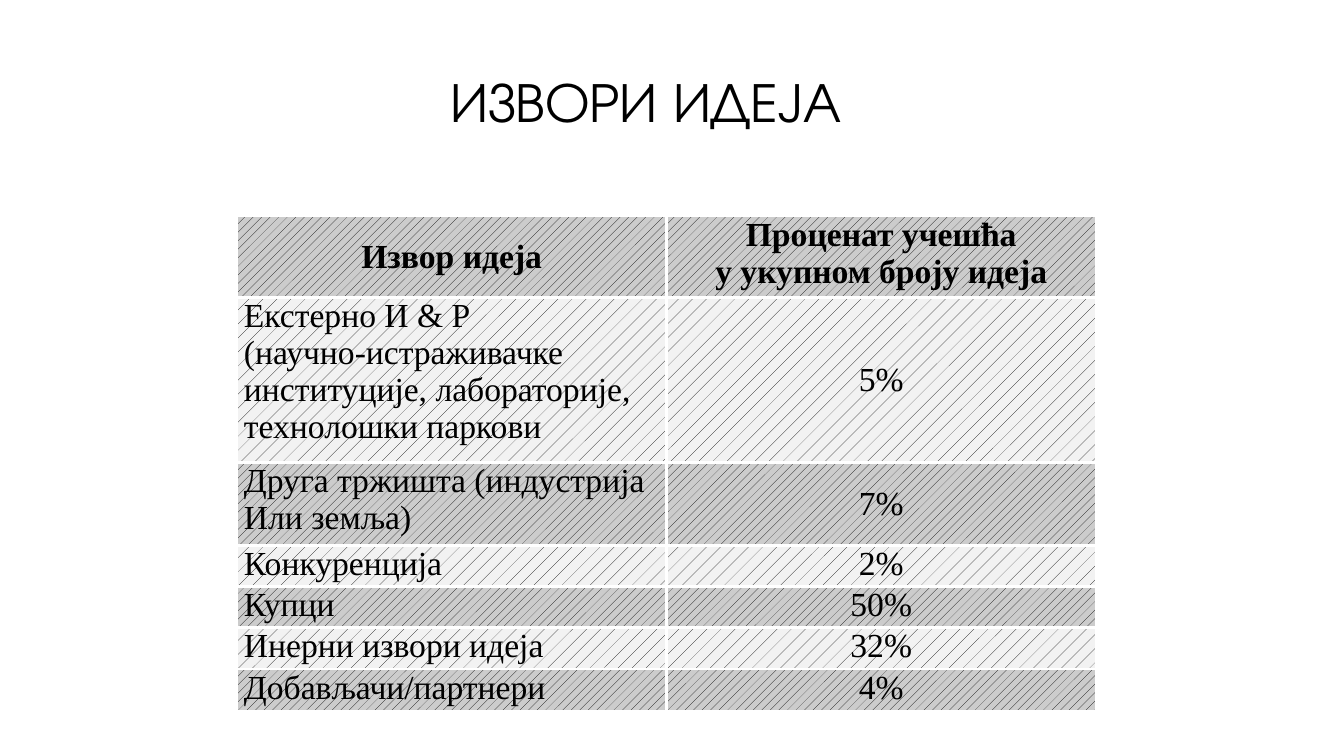
import pptx
import pptx.dml.color
import pptx.enum.dml
import pptx.enum.text
import pptx.oxml
import pptx.oxml.ns
import pptx.util

ALIGN = pptx.enum.text.PP_ALIGN
ANCHOR = pptx.enum.text.MSO_ANCHOR
PATTERN = pptx.enum.dml.MSO_PATTERN

IDEA_SOURCES = [
    ("Извор идеја", "Проценат учешћа\nу укупном броју идеја"),
    ("Екстерно И & Р\n(научно-истраживачке\nинституције, лабораторије,\nтехнолошки паркови", "5%"),
    ("Друга тржишта (индустрија\nИли земља)", "7%"),
    ("Конкуренција", "2%"),
    ("Купци", "50%"),
    ("Инерни извори идеја", "32%"),
    ("Добављачи/партнери", "4%"),
]
ROW_SPANS = [1.8, 4, 2, 1, 1, 1, 1]
COLUMN_SPANS = [6, 6]
MIDDLE_CELLS = {(0, 0), (1, 1), (2, 1)}


def color(hex_text):
    return pptx.dml.color.RGBColor.from_string(hex_text)


class SlideBuilder:
    """Holds the style, the grid and the current slide."""

    column = 0.71
    row = 0.41
    ink = "000000"
    border = "FFFFFF"
    bands = [(PATTERN.PERCENT_20, "CCCCCC"), (PATTERN.PERCENT_5, "F2F2F2")]
    title_font = "TeX Gyre Adventor"
    table_font = "Times New Roman"

    def __init__(self, deck):
        self.page = deck.slides.add_slide(deck.slide_layouts[6])

    def across(self, columns):
        return pptx.util.Inches(columns * self.column)

    def down(self, rows):
        return pptx.util.Inches(rows * self.row)

    def set_text(self, frame, text, font, size, align, bold=False):
        frame.text = text
        for para in frame.paragraphs:
            para.alignment = align
            for span in para.runs:
                span.font.name = font
                span.font.size = pptx.util.Pt(size)
                span.font.bold = bold
                span.font.color.rgb = color(self.ink)

    def title(self, text, left, top, width, height):
        box = self.page.shapes.add_textbox(
            self.across(left), self.down(top), self.across(width), self.down(height))
        frame = box.text_frame
        frame.word_wrap = True
        frame.vertical_anchor = ANCHOR.MIDDLE
        self.set_text(frame, text, self.title_font, 40, ALIGN.CENTER)
        frame.paragraphs[0].line_spacing = 0.9

    def edge(self, cell, sides):
        properties = cell._tc.get_or_add_tcPr()
        for index, side in enumerate(sides):
            line = pptx.oxml.parse_xml(
                f'<a:ln{side} {pptx.oxml.ns.nsdecls("a")} w="{pptx.util.Pt(2.25)}">'
                f'<a:solidFill><a:srgbClr val="{self.border}"/></a:solidFill></a:ln{side}>')
            properties.insert(index, line)

    def fill(self, cell, band):
        pattern, back = self.bands[band]
        cell.fill.patterned()
        cell.fill.pattern = pattern
        cell.fill.fore_color.rgb = color(self.ink)
        cell.fill.back_color.rgb = color(back)

    def table(self, records, left, top, column_spans, row_spans, middle_cells):
        last_row, last_column = len(row_spans) - 1, len(column_spans) - 1
        table = self.page.shapes.add_table(
            len(row_spans), len(column_spans), self.across(left), self.down(top),
            self.across(sum(column_spans)), self.down(sum(row_spans))).table
        table.first_row = table.horz_banding = False
        for table_column, columns in zip(table.columns, column_spans):
            table_column.width = self.across(columns)
        for r, (record, rows) in enumerate(zip(records, row_spans)):
            table.rows[r].height = self.down(rows)
            for c, text in enumerate(record):
                cell = table.cell(r, c)
                cell.margin_left = cell.margin_right = pptx.util.Inches(0.07)
                cell.margin_top = cell.margin_bottom = 0
                cell.vertical_anchor = ANCHOR.MIDDLE if (r, c) in middle_cells else ANCHOR.TOP
                align = ALIGN.JUSTIFY if r and not c else ALIGN.CENTER
                self.set_text(cell.text_frame, text, self.table_font, 24, align, r == 0)
                self.fill(cell, r % 2)
                inner = {"L": c > 0, "R": c < last_column, "T": r > 0, "B": r < last_row}
                self.edge(cell, [side for side, shown in inner.items() if shown])


def main():
    deck = pptx.Presentation()
    deck.slide_width = pptx.util.Inches(13.33)
    deck.slide_height = pptx.util.Inches(7.5)
    slide = SlideBuilder(deck)
    slide.title("ИЗВОРИ ИДЕЈА", 0.31, 0.46, 17.42, 4.15)
    slide.table(IDEA_SOURCES, 3.31, 5.24, COLUMN_SPANS, ROW_SPANS, MIDDLE_CELLS)
    deck.save("out.pptx")


if __name__ == "__main__":
    main()
